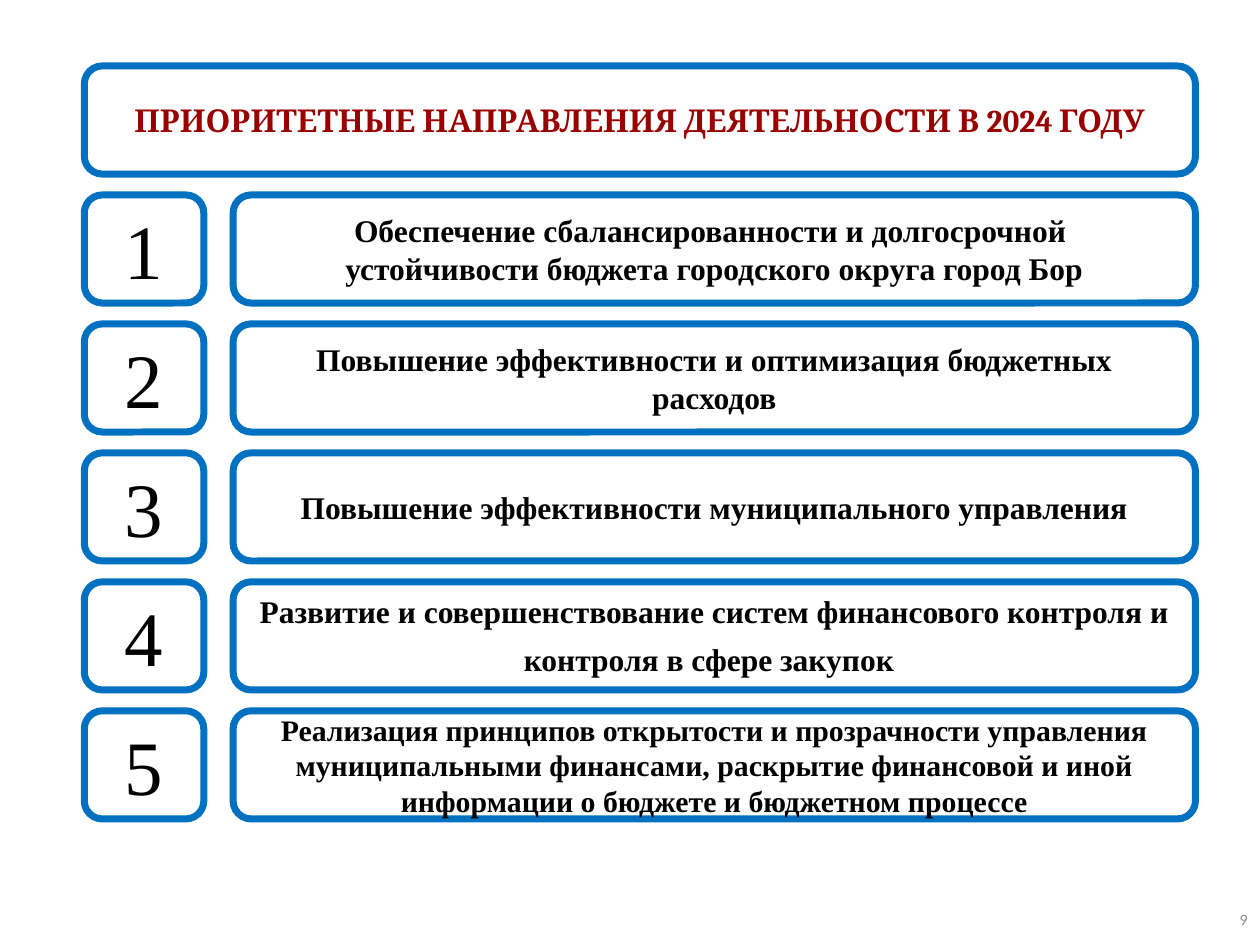
from pptx import Presentation
from pptx.dml.color import RGBColor
from pptx.enum import shapes, text
from pptx.util import Cm, Pt

# Content
TITLE = "ПРИОРИТЕТНЫЕ НАПРАВЛЕНИЯ ДЕЯТЕЛЬНОСТИ В 2024 ГОДУ"
PRIORITIES = [  # paragraphs, text size
    (["Обеспечение сбалансированности и долгосрочной ",
      "устойчивости бюджета городского округа город Бор"], 18),
    (["Повышение эффективности и оптимизация бюджетных расходов"], 18),
    (["Повышение эффективности муниципального управления"], 18),
    (["Развитие и совершенствование систем финансового контроля "
      "и контроля в сфере закупок"], 18),
    (["Реализация принципов открытости и прозрачности управления "
      "муниципальными финансами, раскрытие финансовой и иной "
      "информации о бюджете и бюджетном процессе"], 17),
]
TALL_ENDING = 4  # this priority ends with a larger space that opens its last line
PAGE_NUMBER = "9"

COLORS = {"border": "0070C0", "title": "990000", "text": "000000", "number": "898989"}
BODY_FONT = "Times New Roman"

# Grid, in centimetres
LEFT, RIGHT, TOP = 1.7, 24.1, 1.33
NUMBER_WIDTH, GAP = 2.41, 0.59
HEIGHT, PITCH = 2.18, 2.6
TEXT_LEFT = LEFT + NUMBER_WIDTH + GAP


def color(name):
    return RGBColor.from_string(COLORS[name])


def write(box, lines, size, font, tint, bold=False, align=text.PP_ALIGN.CENTER):
    frame = box.text_frame
    frame.word_wrap = True
    frame.vertical_anchor = text.MSO_ANCHOR.MIDDLE
    for index, line in enumerate(lines):
        para = frame.add_paragraph() if index else frame.paragraphs[0]
        para.alignment = align
        para.font.size = Pt(size)
        para.font.name = font
        para.font.bold = bold
        para.font.color.rgb = color(tint)
        para.add_run().text = line


def add_card(page, left, right, row, lines, size, font=BODY_FONT, tint="text", bold=True):
    card = page.shapes.add_shape(
        shapes.MSO_SHAPE.ROUNDED_RECTANGLE,
        Cm(left), Cm(TOP + row * PITCH), Cm(right - left), Cm(HEIGHT))
    card.shadow.inherit = False
    card.fill.background()
    card.line.color.rgb = color("border")
    card.line.width = Pt(4)
    write(card, lines, size, font, tint, bold)
    return card


def main():
    deck = Presentation()
    deck.slide_width, deck.slide_height = Cm(25.4), Cm(19.05)
    page = deck.slides.add_slide(deck.slide_layouts[6])

    # Title card
    add_card(page, LEFT, RIGHT, 0, [TITLE], 18, "Cambria", "title")

    # Numbered priorities
    for row, (lines, size) in enumerate(PRIORITIES, start=1):
        add_card(page, LEFT, LEFT + NUMBER_WIDTH, row, [str(row)], 44, bold=False)
        card = add_card(page, TEXT_LEFT, RIGHT, row, lines, size)
        if row == TALL_ENDING:
            span = card.text_frame.paragraphs[-1].add_run()
            span.text = " "
            span.font.size = Pt(24)

    # Page number
    box = page.shapes.add_textbox(Cm(19.68), Cm(18.03), Cm(5.72), Cm(1.02))
    write(box, [PAGE_NUMBER], 9, "Calibri", "number", align=text.PP_ALIGN.RIGHT)

    deck.save("out.pptx")


if __name__ == "__main__":
    main()
